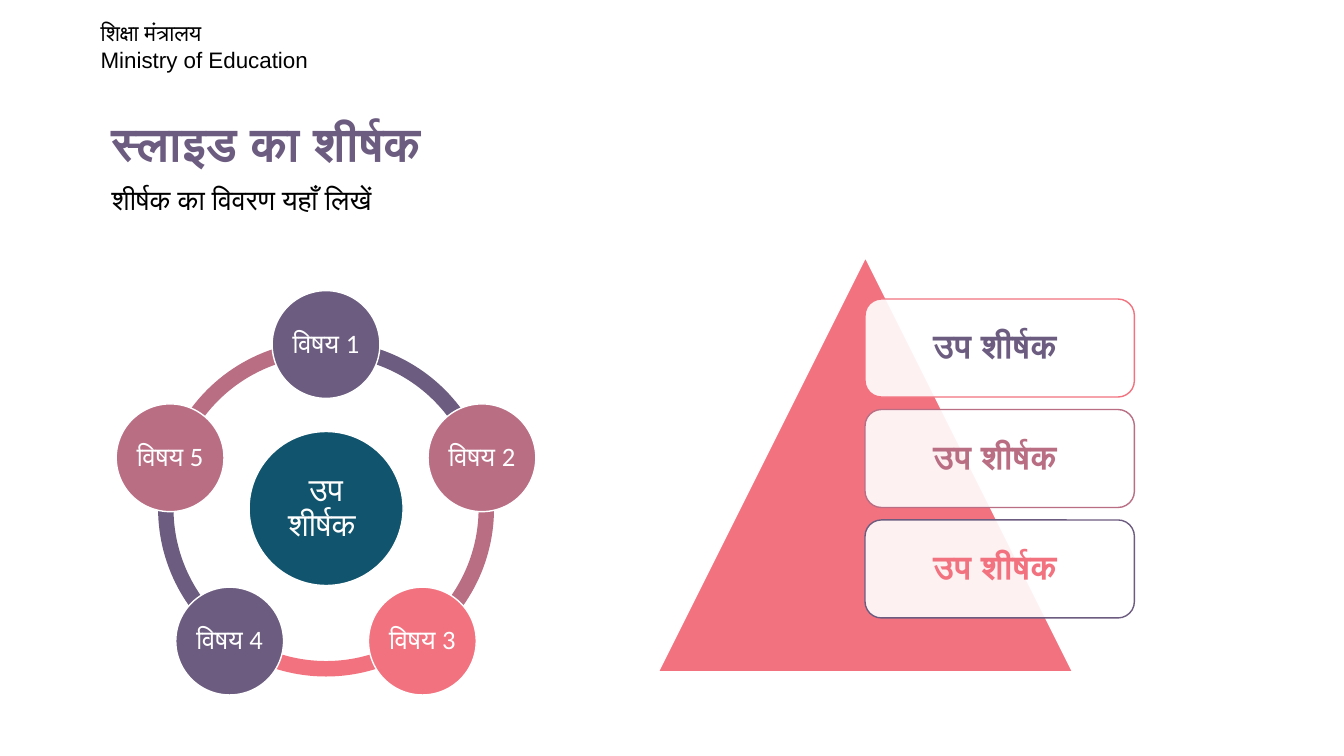
from math import cos, radians, sin

from lxml.etree import SubElement
from pptx import Presentation
from pptx.dml.color import RGBColor
from pptx.enum.shapes import MSO_SHAPE
from pptx.enum.text import MSO_ANCHOR, PP_ALIGN
from pptx.oxml.ns import qn
from pptx.util import Pt

PURPLE, MAUVE, CORAL = "6C5C80", "B96E84", "F2727F"
TEAL, WHITE, BLACK = "10546D", "FFFFFF", "000000"


def color(value):
    return RGBColor.from_string(value)


def add_figure(kind, left, top, width, height, fill, line=None, text="",
               size=19, text_color=WHITE, bold=False, inset=2.4):
    figure = page.shapes.add_shape(kind, Pt(left), Pt(top), Pt(width), Pt(height))
    figure.shadow.inherit = False
    figure.fill.solid()
    figure.fill.fore_color.rgb = color(fill)
    if line:
        figure.line.color.rgb = color(line)
        figure.line.width = Pt(1)
    else:
        figure.line.fill.background()
    if text:
        frame = figure.text_frame
        frame.text = text
        frame.word_wrap = True
        frame.vertical_anchor = MSO_ANCHOR.MIDDLE
        frame.margin_left = frame.margin_right = Pt(inset)
        frame.margin_top = frame.margin_bottom = Pt(inset)
        para = frame.paragraphs[0]
        para.alignment = PP_ALIGN.CENTER
        para.line_spacing = 0.9
        font = para.runs[0].font
        font.name, font.size, font.bold = "Calibri", Pt(size), bold
        font.color.rgb = color(text_color)
    return figure


deck = Presentation()
deck.slide_width, deck.slide_height = Pt(960), Pt(540)
page = deck.slides.add_slide(deck.slide_layouts[6])

# Ministry name, title and description
headings = [
    ("शिक्षा मंत्रालय\nMinistry of Education", 64.8, 10.1, 374, 46, "Arial", 16, BLACK, False, 1),
    ("स्लाइड का शीर्षक", 72.7, 82.8, 441, 45, "Arial", 34, PURPLE, True, 0.9),
    ("शीर्षक का विवरण यहाँ लिखें", 72.7, 129.6, 518, 27, "Calibri", 20, BLACK, False, 0.9),
]
for text, left, top, width, height, name, size, ink, bold, spacing in headings:
    box = page.shapes.add_textbox(Pt(left), Pt(top), Pt(width), Pt(height))
    box.text_frame.word_wrap = True
    box.text_frame.text = text
    for para in box.text_frame.paragraphs:
        para.line_spacing = spacing
        font = para.runs[0].font
        font.name, font.size, font.bold = name, Pt(size), bold
        font.color.rgb = color(ink)

# Topic cycle: ring segments, hub, then the topics clockwise from the top
center_x, center_y = 232.9, 363.2
ring, hub, topic, orbit = 240, 110, 77, 117.1
topic_colors = [PURPLE, MAUVE, CORAL, PURPLE, MAUVE]
angles = [(270 + 72 * i) % 360 for i in range(5)]

for i in reversed(range(5)):
    arc = add_figure(MSO_SHAPE.BLOCK_ARC, center_x - ring / 2, center_y - ring / 2,
                     ring, ring, topic_colors[i])
    # Angles are stored in 60000ths of a degree, adjustments in 100000ths
    arc.adjustments[0] = angles[i] * 0.6
    arc.adjustments[1] = angles[(i + 1) % 5] * 0.6
    arc.adjustments[2] = 0.046

add_figure(MSO_SHAPE.OVAL, center_x - hub / 2, center_y - hub / 2, hub, hub,
           TEAL, WHITE, "उप शीर्षक ", 23)

for i, angle in enumerate(angles):
    left = center_x + orbit * cos(radians(angle)) - topic / 2
    top = center_y + orbit * sin(radians(angle)) - topic / 2
    add_figure(MSO_SHAPE.OVAL, left, top, topic, topic, topic_colors[i], WHITE,
               f"विषय {i + 1}")

# Pyramid with three translucent cards
add_figure(MSO_SHAPE.ISOSCELES_TRIANGLE, 470.2, 183.9, 296, 296, CORAL, WHITE)
for i, (border, ink) in enumerate([(CORAL, PURPLE), (MAUVE, MAUVE), (PURPLE, CORAL)]):
    card = add_figure(MSO_SHAPE.ROUNDED_RECTANGLE, 617.9, 213.6 + 78.9 * i, 192.4, 70,
                      WHITE, border, "उप शीर्षक ", 24, ink, True, 7.2)
    fill_color = card.fill._xPr.find(qn("a:solidFill"))[0]
    SubElement(fill_color, qn("a:alpha")).set("val", "90000")

deck.save("out.pptx")
